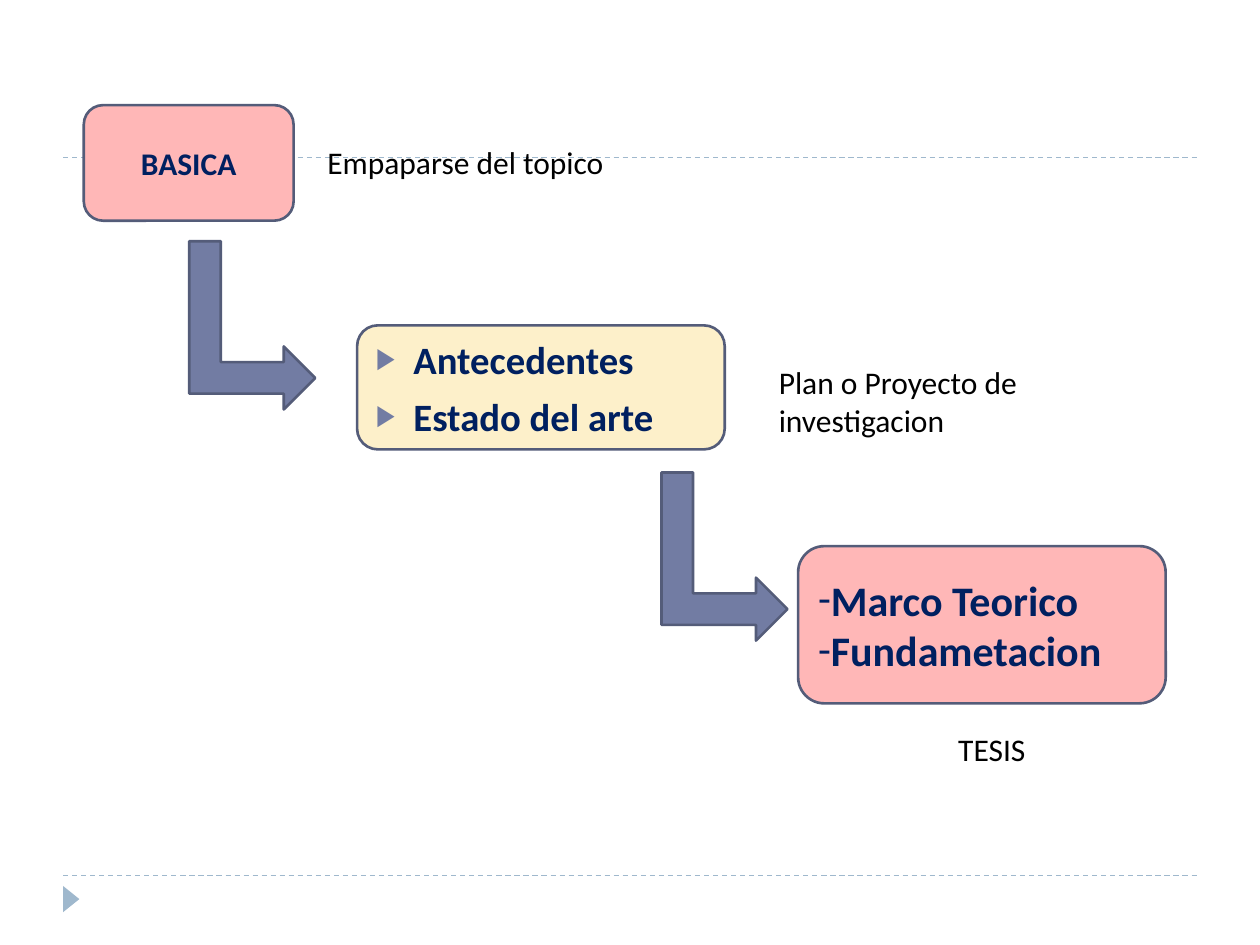
from dataclasses import dataclass

from lxml.etree import SubElement
from pptx import Presentation
from pptx.dml.color import RGBColor
from pptx.enum.dml import MSO_LINE
from pptx.enum.shapes import MSO_CONNECTOR, MSO_SHAPE
from pptx.enum.text import MSO_ANCHOR, MSO_AUTO_SIZE, PP_ALIGN
from pptx.oxml.ns import qn
from pptx.util import Cm, Pt


@dataclass(frozen=True)
class Theme:
    font: str = "Calibri"
    navy: str = "002060"
    black: str = "000000"
    pink: str = "FFB7B7"
    cream: str = "FDF0CA"
    slate: str = "727CA3"
    edge: str = "545C79"
    rule: str = "9FB8CD"
    small: float = 18
    medium: float = 22.1
    large: float = 24


@dataclass(frozen=True)
class Area:
    """A place on the slide, in centimetres."""
    left: float
    top: float
    width: float
    height: float

    def sides(self) -> tuple:
        return Cm(self.left), Cm(self.top), Cm(self.width), Cm(self.height)


@dataclass(frozen=True)
class Bullet:
    sign: str
    indent: float = 0
    color: str = ""
    scale: int = 100


@dataclass(frozen=True)
class Label:
    area: Area
    text: str
    align: PP_ALIGN = PP_ALIGN.LEFT


THEME = Theme()
RULES = (3.18, 17.65)
STEPS = (Area(3.39, 5.29, 3.39, 2.54), Area(12.91, 9.95, 3.39, 2.54))
LABELS = (
    Label(Area(6.35, 2.75, 6.56, 1.06), "Empaparse del topico"),
    Label(Area(15.45, 7.2, 6.56, 1.8), "Plan o Proyecto de investigacion"),
    Label(Area(18.41, 14.6, 3.17, 1.02), "TESIS", PP_ALIGN.CENTER),
)


def paint(shape, fill: str, edge: str = "") -> None:
    shape.fill.solid()
    shape.fill.fore_color.rgb = RGBColor.from_string(fill)
    if edge:
        shape.line.color.rgb = RGBColor.from_string(edge)
        shape.line.width = Pt(1.5)
    else:
        shape.line.fill.background()


def add_mark(para, mark: Bullet) -> None:
    props = para._p.get_or_add_pPr()
    props.set("marL", str(Cm(mark.indent)))
    props.set("indent", str(-Cm(mark.indent)))
    if mark.color:
        color = SubElement(props, qn("a:buClr"))
        SubElement(color, qn("a:srgbClr"), val=mark.color)
    SubElement(props, qn("a:buSzPct"), val=str(mark.scale * 1000))
    SubElement(props, qn("a:buFont"), typeface=THEME.font)
    SubElement(props, qn("a:buChar"), char=mark.sign)


def write(shape, *lines: str, size: float = THEME.small, color: str = THEME.navy,
          bold: bool = True, align: PP_ALIGN = PP_ALIGN.JUSTIFY,
          anchor: MSO_ANCHOR = MSO_ANCHOR.MIDDLE, before: float = 0,
          mark: Bullet | None = None) -> None:
    frame = shape.text_frame
    frame.word_wrap = True
    frame.auto_size = MSO_AUTO_SIZE.NONE
    frame.vertical_anchor = anchor
    for index, line in enumerate(lines):
        para = frame.add_paragraph() if index else frame.paragraphs[0]
        para.alignment = align
        para.space_before = Pt(before)
        if mark:
            add_mark(para, mark)
        run = para.add_run()
        run.text = line
        run.font.name = THEME.font
        run.font.size = Pt(size)
        run.font.bold = bold
        run.font.color.rgb = RGBColor.from_string(color)


def add_shape(slide, kind: MSO_SHAPE, area: Area, fill: str, edge: str = "",
              turn: float = 0):
    shape = slide.shapes.add_shape(kind, *area.sides())
    shape.shadow.inherit = False
    shape.rotation = turn
    paint(shape, fill, edge)
    return shape


def add_rule(slide, top: float) -> None:
    rule = slide.shapes.add_connector(
        MSO_CONNECTOR.STRAIGHT, Cm(1.27), Cm(top), Cm(24.13), Cm(top))
    rule.line.color.rgb = RGBColor.from_string(THEME.rule)
    rule.line.width = Pt(0.75)
    rule.line.dash_style = MSO_LINE.DASH
    SubElement(rule._element.spPr, qn("a:effectLst"))


def shape_body(body, area: Area) -> None:
    """Place the body placeholder and give it rounded corners."""
    body.left, body.top, body.width, body.height = area.sides()
    form = SubElement(body._element.spPr, qn("a:prstGeom"), prst="roundRect")
    SubElement(form, qn("a:avLst"))
    paint(body, THEME.cream, THEME.edge)


def main() -> None:
    deck = Presentation()
    deck.slide_width, deck.slide_height = Cm(25.4), Cm(19.05)
    slide = deck.slides.add_slide(deck.slide_layouts[1])
    title = slide.shapes.title._element
    title.getparent().remove(title)

    for top in RULES:
        add_rule(slide, top)
    add_shape(slide, MSO_SHAPE.ISOSCELES_TRIANGLE, Area(1.17, 17.96, 0.53, 0.33),
              THEME.rule, turn=90)

    basic = add_shape(slide, MSO_SHAPE.ROUNDED_RECTANGLE,
                      Area(1.69, 2.12, 4.23, 2.33), THEME.pink, THEME.edge)
    write(basic, "BASICA", align=PP_ALIGN.CENTER)

    body = slide.placeholders[1]
    shape_body(body, Area(7.2, 6.56, 7.41, 2.5))
    write(body, "Antecedentes", "Estado del arte", size=THEME.medium, before=6,
          mark=Bullet("▶", 0.76, THEME.slate, 76))

    frame = add_shape(slide, MSO_SHAPE.ROUNDED_RECTANGLE,
                      Area(16.09, 11.01, 7.41, 3.17), THEME.pink, THEME.edge)
    write(frame, "Marco Teorico", "Fundametacion", size=THEME.large,
          mark=Bullet("-"))

    for area in STEPS:
        add_shape(slide, MSO_SHAPE.BENT_UP_ARROW, area, THEME.slate, THEME.edge,
                  turn=90)
    for label in LABELS:
        box = slide.shapes.add_textbox(*label.area.sides())
        write(box, label.text, color=THEME.black, bold=False, align=label.align,
              anchor=MSO_ANCHOR.TOP)

    deck.save("out.pptx")


if __name__ == "__main__":
    main()
